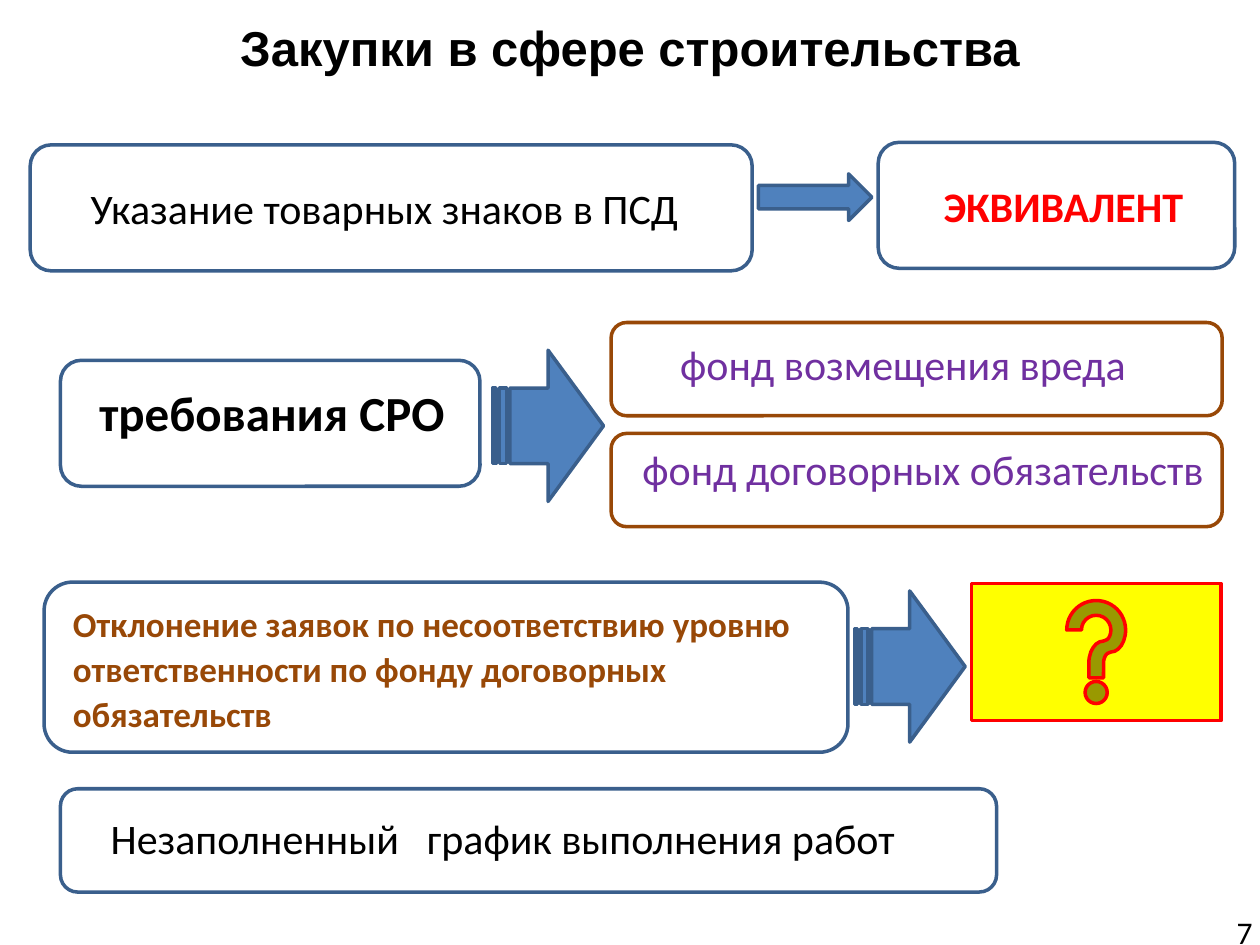
"""Build the slide on procurement in construction."""
import pptx
import pptx.util
import pptx.dml.color
import pptx.enum.shapes
import pptx.enum.text
import pptx.oxml.ns
from lxml import etree

Inches = pptx.util.Inches
Pt = pptx.util.Pt
MSO = pptx.enum.shapes.MSO_SHAPE
ALIGN = pptx.enum.text.PP_ALIGN
COLORS = {
    "black": "000000", "red": "FF0000", "yellow": "FFFF00", "blue": "4F81BD",
    "navy": "3A5F8C", "brown": "984807", "purple": "7030A0",
}


def rgb(name):
    return pptx.dml.color.RGBColor.from_string(COLORS[name])


def add_text(box, text, size, color="black", bold=False, font="Calibri",
             align=ALIGN.LEFT, wrap=False, spaced=False, tab=None):
    sp = s.shapes.add_textbox(*map(Inches, box))
    tf = sp.text_frame
    tf.word_wrap = wrap
    tf.text = text
    p = tf.paragraphs[0]
    p.alignment = align
    if spaced:
        p.line_spacing = 1.07
        p.space_after = Pt(8)
    if tab:
        qn = pptx.oxml.ns.qn
        tabs = etree.SubElement(p._p.get_or_add_pPr(), qn("a:tabLst"))
        etree.SubElement(tabs, qn("a:tab"), pos=str(Inches(tab)), algn="l")
    r = p.runs[0]
    r.font.name = font
    r.font.size = Pt(size)
    r.font.bold = bold
    r.font.color.rgb = rgb(color)
    return tf


prs = pptx.Presentation()
prs.slide_width = Inches(10)
prs.slide_height = Inches(7.5)
s = prs.slides.add_slide(prs.slide_layouts[6])

shapes = [
    (MSO.ROUNDED_RECTANGLE, (0.24, 1.15, 5.73, 1), None, "navy"),
    (MSO.ROUNDED_RECTANGLE, (6.97, 1.13, 2.83, 1), None, "navy"),
    (MSO.RIGHT_ARROW, (6.02, 1.38, 0.9, 0.37), "blue", "navy"),
    (MSO.ROUNDED_RECTANGLE, (0.48, 2.86, 3.33, 1), None, "navy"),
    (MSO.ROUNDED_RECTANGLE, (4.85, 2.56, 4.85, 0.74), None, "brown"),
    (MSO.ROUNDED_RECTANGLE, (4.85, 3.44, 4.85, 0.74), None, "brown"),
    (MSO.STRIPED_RIGHT_ARROW, (6.78, 4.69, 0.88, 1.2), "blue", "navy"),
    (MSO.ACTION_BUTTON_HELP, (7.71, 4.63, 1.98, 1.09), "yellow", "red"),
    (MSO.ROUNDED_RECTANGLE, (0.35, 4.62, 6.38, 1.35), None, "navy"),
    (MSO.STRIPED_RIGHT_ARROW, (3.91, 2.78, 0.88, 1.2), "blue", "navy"),
    (MSO.ROUNDED_RECTANGLE, (0.48, 6.26, 7.43, 0.82), None, "navy"),
]
for kind, box, fill, line in shapes:
    sp = s.shapes.add_shape(kind, *map(Inches, box))
    sp.shadow.inherit = False
    if fill:
        sp.fill.solid()
        sp.fill.fore_color.rgb = rgb(fill)
    else:
        sp.fill.background()
    sp.line.color.rgb = rgb(line)
    sp.line.width = Pt(2)

title = add_text((0, 0.03, 10, 0.69), "Закупки в сфере строительства", 28,
                 bold=True, font="Arial", align=ALIGN.CENTER, wrap=True)
title.vertical_anchor = pptx.enum.text.MSO_ANCHOR.MIDDLE
add_text((0.62, 1.4, 4.98, 0.5), "Указание товарных знаков в ПСД", 24)
add_text((7.39, 1.38, 2.12, 0.5), "ЭКВИВАЛЕНТ", 24, "red", bold=True)
add_text((0.69, 2.99, 3.06, 0.57), "требования СРО", 28, bold=True)
add_text((5.3, 2.61, 3.78, 0.53), "фонд возмещения вреда", 24, "purple", spaced=True)
add_text((5, 3.44, 4.69, 0.51), "фонд договорных обязательств", 24, "purple", spaced=True)
add_text((0.48, 4.71, 6.08, 1.18),
         "Отклонение заявок по несоответствию уровню ответственности "
         "по фонду договорных обязательств",
         20, "brown", bold=True, wrap=True, spaced=True)
add_text((0.78, 6.4, 6.57, 0.5), "Незаполненный\tграфик выполнения работ", 24, tab=2.51)
add_text((7.71, 7.2, 2.33, 0.33), "7", 18, align=ALIGN.RIGHT, wrap=True)

prs.save("out.pptx")
